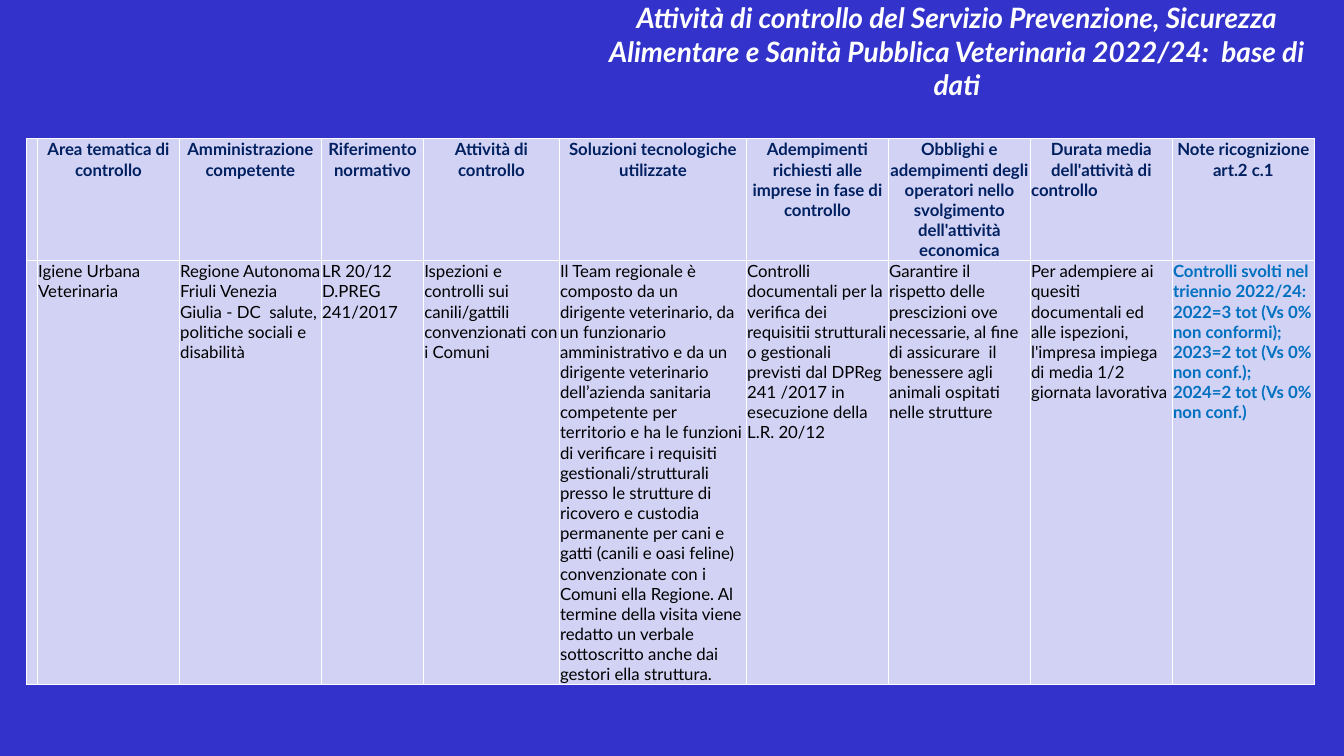
"""Build the slide on control activities, with its title and table."""
import pptx
import pptx.util
import pptx.dml.color
import pptx.enum.text
import pptx.oxml
import pptx.oxml.ns

Pt = pptx.util.Pt
ALIGN = pptx.enum.text.PP_ALIGN
ANCHOR = pptx.enum.text.MSO_ANCHOR

WHITE, NAVY, BLACK, AZURE = "FFFFFF", "002060", "000000", "0070C0"
GROUND, PALE = "3333CC", "D2D2F4"

TITLE = ("Attività di controllo del Servizio Prevenzione, Sicurezza Alimentare "
         "e\u00a0Sanità Pubblica Veterinaria 2022/24:  base di dati")
WIDTHS = [8, 101.4, 101.4, 73, 97, 133.7, 101.4, 101.4, 101.4, 101.4]
HEIGHTS = [87, 303]
HEADS = [
    "",
    "Area tematica di controllo",
    "Amministrazione competente",
    "Riferimento normativo",
    "Attività di controllo",
    "Soluzioni tecnologiche utilizzate",
    "Adempimenti richiesti alle imprese in fase di controllo",
    "Obblighi e adempimenti degli operatori nello svolgimento dell'attività economica",
    "Durata media dell'attività di\ncontrollo",
    "Note ricognizione art.2 c.1",
]
BODY = [
    "",
    "Igiene Urbana Veterinaria",
    "Regione Autonoma Friuli Venezia Giulia - DC  salute, politiche sociali e disabilità",
    "LR 20/12 D.PREG 241/2017",
    "Ispezioni e controlli sui canili/gattili convenzionati con i Comuni",
    "Il Team regionale è composto da un dirigente veterinario, da un funzionario "
    "amministrativo e da un dirigente veterinario dell’azienda sanitaria competente "
    "per territorio e ha le funzioni di verificare i requisiti gestionali/strutturali "
    "presso le strutture di ricovero e custodia permanente per cani e gatti (canili e "
    "oasi feline) convenzionate con i Comuni ella Regione. Al termine della visita "
    "viene redatto un verbale sottoscritto anche dai gestori ella struttura.",
    "Controlli documentali per la verifica dei requisitii strutturali o gestionali "
    "previsti dal DPReg 241 /2017 in esecuzione della L.R. 20/12",
    "Garantire il rispetto delle prescizioni ove necessarie, al fine di assicurare  il "
    "benessere agli animali ospitati nelle strutture",
    "Per adempiere ai quesiti documentali ed alle ispezioni, l'impresa impiega di media "
    "1/2 giornata lavorativa",
    "Controlli svolti nel triennio 2022/24: 2022=3 tot (Vs 0% non conformi); "
    "2023=2 tot (Vs 0% non conf.); 2024=2 tot (Vs 0% non conf.)",
]


def tint(code):
    return pptx.dml.color.RGBColor.from_string(code)


class Deck:
    def __init__(self, face, ground):
        self.face = face
        self.show = pptx.Presentation()
        self.show.slide_width, self.show.slide_height = Pt(960), Pt(540)
        self.slide = self.show.slides.add_slide(self.show.slide_layouts[6])
        fill = self.slide.background.fill
        fill.solid()
        fill.fore_color.rgb = tint(ground)

    def style(self, para, size, color, bold, align, slant=False):
        para.alignment = align
        font = para.font
        font.name, font.size = self.face, Pt(size)
        font.bold, font.italic = bold, slant
        font.color.rgb = tint(color)

    def title(self, text, left, top, width, height):
        box = self.slide.shapes.add_textbox(Pt(left), Pt(top), Pt(width), Pt(height))
        frame = box.text_frame
        frame.word_wrap = True
        frame.vertical_anchor = ANCHOR.MIDDLE
        frame.text = text
        self.style(frame.paragraphs[0], 20, WHITE, True, ALIGN.CENTER, True)

    def border(self, cell, color):
        props = cell._tc.get_or_add_tcPr()
        space = pptx.oxml.ns.nsdecls("a")
        for spot, side in enumerate(("lnL", "lnR", "lnT", "lnB")):
            props.insert(spot, pptx.oxml.parse_xml(
                f'<a:{side} {space} w="12700"><a:solidFill>'
                f'<a:srgbClr val="{color}"/></a:solidFill></a:{side}>'))

    def cell(self, cell, text, color, bold, align):
        cell.margin_left = cell.margin_right = cell.margin_top = Pt(0.5)
        cell.margin_bottom = 0
        cell.fill.solid()
        cell.fill.fore_color.rgb = tint(PALE)
        self.border(cell, WHITE)
        cell.text = text
        for para in cell.text_frame.paragraphs:
            self.style(para, 12, color, bold, align)

    def table(self, left, top, widths, heights):
        frame = self.slide.shapes.add_table(
            len(heights), len(widths), Pt(left), Pt(top),
            Pt(sum(widths)), Pt(sum(heights)))
        table = frame.table
        table.first_row = table.horz_banding = False
        for col, width in zip(table.columns, widths):
            col.width = Pt(width)
        for row, height in zip(table.rows, heights):
            row.height = Pt(height)
        return table


def main():
    deck = Deck("Lato", GROUND)
    deck.title(TITLE, 416, 6.5, 535, 60)
    table = deck.table(18.8, 99, WIDTHS, HEIGHTS)
    last = len(WIDTHS) - 1
    for col, (head, text) in enumerate(zip(HEADS, BODY)):
        deck.cell(table.cell(0, col), head, NAVY, True, ALIGN.CENTER)
        note = col == last
        deck.cell(table.cell(1, col), text, AZURE if note else BLACK, note, ALIGN.LEFT)
    table.cell(0, last - 1).text_frame.paragraphs[1].alignment = ALIGN.LEFT
    deck.show.save("out.pptx")


if __name__ == "__main__":
    main()
